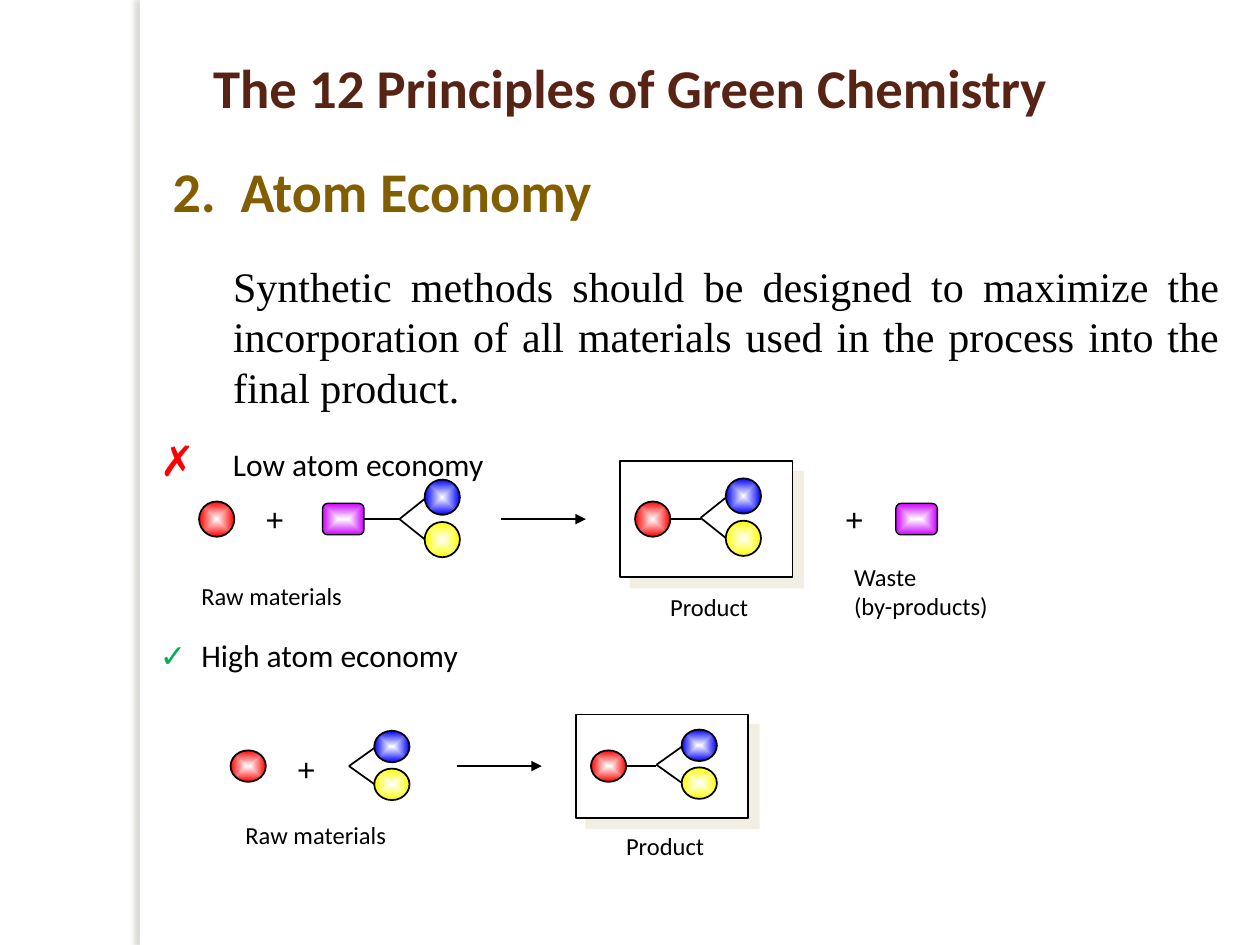
from pptx import Presentation
from pptx.dml.color import RGBColor
from pptx.enum.shapes import MSO_CONNECTOR, MSO_SHAPE
from pptx.enum.text import MSO_ANCHOR, PP_ALIGN
from pptx.oxml import parse_xml
from pptx.oxml.ns import nsdecls, qn
from pptx.util import Inches, Pt

COLORS = {
    "title": "572314", "heading": "835E01", "black": "000000", "white": "FFFFFF",
    "red": "FF0000", "blue": "0000FF", "yellow": "FFFF00", "purple": "CC00FF",
    "check": "00B050", "box shadow": "E7DEC9", "strip shadow": "736F63",
}
BALL_WIDTH = 0.28
BLOCK_WIDTH, BLOCK_HEIGHT = 0.33, 0.25


def rgb(name):
    return RGBColor.from_string(COLORS[name])


def write(para, text, size=14, font="Calibri", color="black", bold=False,
          align=PP_ALIGN.LEFT):
    para.alignment = align
    span = para.add_run()
    span.text = text
    span.font.size = Pt(size)
    span.font.name = font
    span.font.bold = bold
    span.font.color.rgb = rgb(color)


def place(shape, left, top, width, height):
    shape.left, shape.top = Inches(left), Inches(top)
    shape.width, shape.height = Inches(width), Inches(height)


def add_label(page, text, left, top, width, height=0.4, **style):
    frame = page.shapes.add_textbox(
        Inches(left), Inches(top), Inches(width), Inches(height)).text_frame
    frame.word_wrap = True
    for index, line in enumerate(text.split("\n")):
        para = frame.add_paragraph() if index else frame.paragraphs[0]
        write(para, line, **style)


def add_outline(page, kind, left, top, width, height, line_width=1):
    shape = page.shapes.add_shape(
        kind, Inches(left), Inches(top), Inches(width), Inches(height))
    shape.shadow.inherit = False
    shape.fill.solid()
    shape.fill.fore_color.rgb = rgb("white")
    if line_width:
        shape.line.color.rgb = rgb("black")
        shape.line.width = Pt(line_width)
    else:
        shape.line.fill.background()
    return shape


def add_shadow(shape, color, opacity, blur, distance, angle):
    effects = shape._element.spPr.find(qn("a:effectLst"))
    effects.append(parse_xml(
        f'<a:outerShdw {nsdecls("a")} blurRad="{Pt(blur)}" dist="{Pt(distance)}" '
        f'dir="{angle * 60000}" algn="tl" rotWithShape="0">'
        f'<a:srgbClr val="{COLORS[color]}"><a:alpha val="{opacity * 1000}"/></a:srgbClr>'
        '</a:outerShdw>'))


def glow(shape, color):
    """Fill from a white centre to the colour at the rim."""
    shape.fill.gradient()
    for stop, name in zip(shape.fill.gradient_stops, ("white", color)):
        stop.color.rgb = rgb(name)
    gradient = shape._element.spPr.find(qn("a:gradFill"))
    gradient.replace(gradient.find(qn("a:lin")), parse_xml(
        f'<a:path {nsdecls("a")} path="shape">'
        '<a:fillToRect l="50000" t="50000" r="50000" b="50000"/></a:path>'))


def add_ball(page, color, left, center, height):
    ball = add_outline(page, MSO_SHAPE.OVAL, left, center - height / 2,
                       BALL_WIDTH, height)
    glow(ball, color)


def add_block(page, left, center):
    block = add_outline(page, MSO_SHAPE.ROUNDED_RECTANGLE, left,
                        center - BLOCK_HEIGHT / 2, BLOCK_WIDTH, BLOCK_HEIGHT, 0.75)
    glow(block, "purple")
    return block


def add_bond(page, start, end, arrow=False):
    bond = page.shapes.add_connector(
        MSO_CONNECTOR.STRAIGHT, *(Inches(value) for value in (*start, *end)))
    bond.line.color.rgb = rgb("black")
    bond.line.width = Pt(1)
    if arrow:
        bond.line._get_or_add_ln().append(
            parse_xml(f'<a:tailEnd {nsdecls("a")} type="triangle"/>'))
    bond._element.spPr.append(parse_xml(f'<a:effectLst {nsdecls("a")}/>'))
    return bond


def add_fork(page, vertex, axis, ball_height):
    """Blue and yellow balls on two bonds that meet at the vertex."""
    for color, side in (("blue", -1), ("yellow", 1)):
        add_ball(page, color, vertex + 0.2, axis + (side * 0.6 - 0.02) * ball_height,
                 ball_height)
        add_bond(page, (vertex + 0.2, axis + side * 0.57 * ball_height), (vertex, axis))


def add_outcome(page, box_left, axis, ball_height):
    """Reaction arrow and the framed product."""
    add_bond(page, (box_left - 0.94, axis), (box_left - 0.27, axis), arrow=True)
    box_height = 3.28 * ball_height
    box = add_outline(page, MSO_SHAPE.RECTANGLE, box_left, axis - box_height / 2,
                      1.37, box_height)
    add_shadow(box, "box shadow", 50, 0, 8.5, 45)
    vertex = box_left + 0.64
    add_bond(page, (vertex, axis), (vertex - 0.39, axis))
    add_ball(page, "red", vertex - 0.52, axis, ball_height)
    add_fork(page, vertex, axis - 0.01, ball_height)
    add_label(page, "Product", box_left + 0.3, axis + 1.88 * ball_height, 0.95)


def add_low_economy(page):
    axis, ball_height = 4.12, 0.28
    add_label(page, "✗", 1.17, 3.4, 0.45, size=24, font="Arial", color="red")
    add_label(page, "Low atom economy", 1.75, 3.48, 2.5, size=18)
    add_ball(page, "red", 1.58, axis, ball_height)
    for left in (2.01, 6.61):
        add_label(page, "+", left, axis - 0.2, 0.4, size=18, font="Arial")
    block = add_block(page, 2.56, axis)
    bond = add_bond(page, (2.89, axis), (3.17, axis))
    bond.begin_connect(block, 3)
    add_fork(page, 3.17, axis, ball_height)
    add_label(page, "Raw materials", 1.5, 4.56, 1.4)
    add_outcome(page, 4.92, axis, ball_height)
    add_block(page, 7.11, axis)
    add_label(page, "Waste\n(by-products)", 6.68, 4.41, 1.4, 0.57)


def add_high_economy(page):
    axis, ball_height = 6.08, 0.25
    add_label(page, "✓", 1.17, 5, 0.44, size=18, color="check")
    add_label(page, "High atom economy", 1.5, 5, 2.75, size=18)
    add_ball(page, "red", 1.83, axis, ball_height)
    add_label(page, "+", 2.26, axis - 0.18, 0.4, size=18, font="Arial")
    add_fork(page, 2.77, axis, ball_height)
    add_label(page, "Raw materials", 1.85, 6.46, 1.4)
    add_outcome(page, 4.57, axis, ball_height)


def indent(para, margin, first):
    properties = para._p.get_or_add_pPr()
    properties.set("marL", str(Inches(margin)))
    properties.set("indent", str(Inches(first)))
    properties.append(parse_xml(f'<a:buNone {nsdecls("a")}/>'))


def fill_placeholders(page):
    title, body = page.placeholders
    place(title, 0.75, 0.27, 8.5, 0.83)
    title.text_frame.vertical_anchor = MSO_ANCHOR.MIDDLE
    write(title.text_frame.paragraphs[0], "The 12 Principles of Green Chemistry",
          size=31.2, color="title", bold=True, align=PP_ALIGN.CENTER)

    place(body, 1.17, 1.19, 8.61, 2.15)
    frame = body.text_frame
    frame.vertical_anchor = MSO_ANCHOR.TOP
    heading, principle = frame.paragraphs[0], frame.add_paragraph()
    heading.space_before = Pt(0)
    write(heading, "2.\tAtom Economy", size=32, color="heading", bold=True)
    indent(heading, 0.64, -0.54)
    principle.space_before = Pt(21)
    principle.line_spacing = Pt(28.8)
    write(principle, "Synthetic methods should be designed to maximize the incorporation "
          "of all materials used in the process into the final product.",
          size=24, font="Times New Roman", align=PP_ALIGN.JUSTIFY)
    indent(principle, 0.58, 0)


def main():
    deck = Presentation()
    deck.slide_width, deck.slide_height = Inches(10), Inches(7.5)
    page = deck.slides.add_slide(deck.slide_layouts[1])
    strip = add_outline(page, MSO_SHAPE.RECTANGLE, 1.11, 0, 0.08, 7.5, line_width=0)
    add_shadow(strip, "strip shadow", 25, 3, 3, 180)
    fill_placeholders(page)
    add_high_economy(page)
    add_low_economy(page)
    deck.save("out.pptx")


if __name__ == "__main__":
    main()
